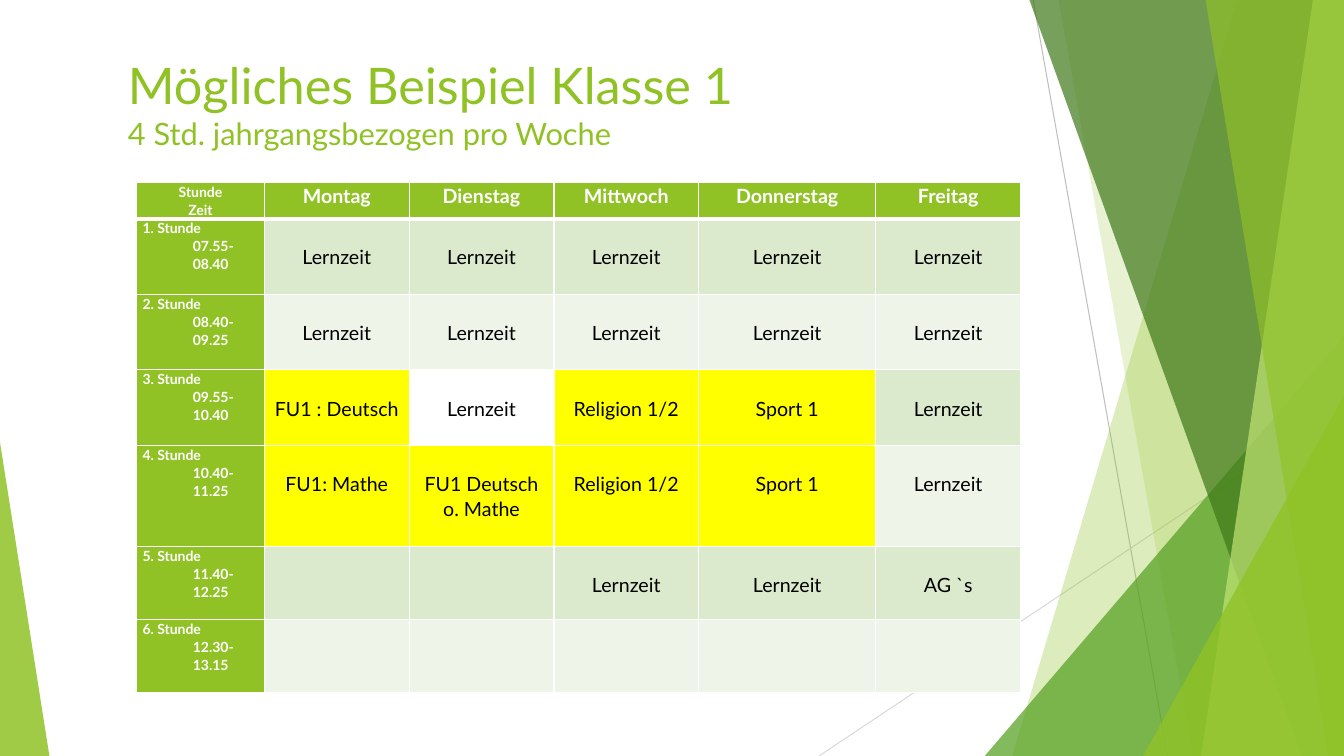
from lxml.etree import SubElement
from pptx import Presentation
from pptx.dml.color import RGBColor
from pptx.enum.shapes import MSO_CONNECTOR, MSO_SHAPE
from pptx.enum.text import MSO_ANCHOR, MSO_AUTO_SIZE, PP_ALIGN
from pptx.oxml.ns import qn
from pptx.util import Pt

# Content
TITLE = "Mögliches Beispiel Klasse 1"
SUBTITLE = "4 Std. jahrgangsbezogen pro Woche"
HEADER = ["Stunde\nZeit", "Montag", "Dienstag", "Mittwoch", "Donnerstag", "Freitag"]
TIMES = ["07.55-08.40", "08.40-09.25", "09.55-10.40",
         "10.40-11.25", "11.40-12.25", "12.30-13.15"]
LESSONS = [
    ["Lernzeit"] * 5,
    ["Lernzeit"] * 5,
    ["FU1 : Deutsch", "Lernzeit", "Religion 1/2", "Sport 1", "Lernzeit"],
    ["FU1: Mathe", "FU1 Deutsch\no. Mathe", "Religion 1/2", "Sport 1", "Lernzeit"],
    ["", "", "Lernzeit", "Lernzeit", "AG `s"],
    [""] * 5,
]
SPECIAL = ("FU1", "Religion", "Sport")  # lessons taught by year group
FREE_CELL = (3, 2)  # row and column of the white cell

# Look
FONT = "Lato"
COLORS = {
    "green": "90C226", "mid": "54A021", "dark": "3F7819", "lime": "C0E474",
    "odd": "DBE9CD", "even": "EEF4E8", "special": "FFFF00",
    "white": "FFFFFF", "text": "000000", "line": "BFBFBF", "pale line": "D9D9D9",
}
WIDTH, HEIGHT = 960, 540
TOP = -0.6
COLUMN_WIDTHS = [91.4, 103.4, 103.4, 103.4, 126.6, 103.4]
ROW_HEIGHTS = [26, 54, 54, 54, 72, 52.2, 52.2]
TABLE_LEFT, TABLE_TOP = 97.5, 130.2
LESSON_OFFSET = 18

# Background: lines (from, to, colour), then facets from back to front.
# A band is (top left, bottom left); a triangle is (left, top, width, height, apex).
LINES = [((738, 0), (834, HEIGHT), "line"), ((WIDTH, 290), (585, HEIGHT), "pale line")]
FACETS = [
    ("band", (884.2, 722.9), "green", 30),
    ("band", (756, 851.8), "green", 20),
    ("triangle", (703.4, 240, 256.6, 300, 1), "mid", 72),
    ("band", (735.1, 929.5), "dark", 70),
    ("band", (938.2, 858.2), "lime", 70),
    ("band", (861.1, 949), "green", 65),
    ("triangle", (816.5, 283, 143.5, 257, 1), "green", 80),
    ("triangle", (0, 316, 35.3, 224, 0), "green", 85),
]


def rgb(name):
    return RGBColor.from_string(COLORS[name])


def add_line(slide, start, end, color):
    points = [Pt(value) for value in start + end]
    connector = slide.shapes.add_connector(MSO_CONNECTOR.STRAIGHT, *points)
    connector.line.color.rgb = rgb(color)
    connector.line.width = Pt(0.75)
    SubElement(connector.element.spPr, qn("a:effectLst"))


def add_facet(slide, kind, geometry, color, opacity):
    if kind == "band":
        top_left, bottom_left = geometry
        builder = slide.shapes.build_freeform(top_left, TOP, scale=float(Pt(1)))
        builder.add_line_segments(
            [(WIDTH, TOP), (WIDTH, HEIGHT), (bottom_left, HEIGHT)], close=True)
        shape = builder.convert_to_shape()
    else:
        *box, apex = geometry
        shape = slide.shapes.add_shape(
            MSO_SHAPE.ISOSCELES_TRIANGLE, *[Pt(value) for value in box])
        shape.adjustments[0] = apex
    shape.shadow.inherit = False
    shape.line.fill.background()
    shape.fill.solid()
    shape.fill.fore_color.rgb = rgb(color)
    fill_color = shape.element.spPr.find(qn("a:solidFill")).find(qn("a:srgbClr"))
    SubElement(fill_color, qn("a:alpha"), val=str(opacity * 1000))


def style_run(run, size, color, bold=False):
    run.font.name = FONT
    run.font.size = Pt(size)
    run.font.bold = bold
    run.font.color.rgb = rgb(color)


def add_borders(cell, top, bottom):
    properties = cell._tc.get_or_add_tcPr()
    for side, width in (("L", 1), ("R", 1), ("T", top), ("B", bottom)):
        line = SubElement(properties, qn("a:ln" + side), w=str(Pt(width)))
        fill = SubElement(line, qn("a:solidFill"))
        SubElement(fill, qn("a:srgbClr"), val=COLORS["white"])


def fill_cell(cell, text, fill, size, color, bold, offset=0):
    cell.fill.solid()
    cell.fill.fore_color.rgb = rgb(fill)
    cell.margin_left = cell.margin_right = Pt(4.3)
    cell.margin_top, cell.margin_bottom = Pt(offset), 0
    cell.vertical_anchor = MSO_ANCHOR.TOP
    cell.text_frame.text = text
    for paragraph in cell.text_frame.paragraphs:
        paragraph.alignment = PP_ALIGN.CENTER
        paragraph.line_spacing = 1.07
        for run in paragraph.runs:
            style_run(run, size, color, bold)


def lesson_fill(row, column, text):
    if (row, column) == FREE_CELL:
        return "white"
    if text.startswith(SPECIAL):
        return "special"
    return "odd" if row % 2 else "even"


def add_timetable(slide):
    frame = slide.shapes.add_table(
        len(ROW_HEIGHTS), len(COLUMN_WIDTHS), Pt(TABLE_LEFT), Pt(TABLE_TOP),
        Pt(sum(COLUMN_WIDTHS)), Pt(sum(ROW_HEIGHTS)))
    table = frame.table
    for column, width in zip(table.columns, COLUMN_WIDTHS):
        column.width = Pt(width)
    for row, height in zip(table.rows, ROW_HEIGHTS):
        row.height = Pt(height)

    hours = [f"{number}. Stunde\n{time}" for number, time in enumerate(TIMES, 1)]
    rows = [HEADER] + [[hour] + lessons for hour, lessons in zip(hours, LESSONS)]
    for row, texts in enumerate(rows):
        for column, text in enumerate(texts):
            cell = table.cell(row, column)
            add_borders(cell, 3 if row == 1 else 1, 3 if row == 0 else 1)
            if row == 0 or column == 0:
                fill_cell(cell, text, "green", 14 if column else 10, "white", True)
            else:
                fill_cell(cell, text, lesson_fill(row, column, text),
                          14, "text", False, LESSON_OFFSET)
        if row > 0:
            label, time = table.cell(row, 0).text_frame.paragraphs
            label.alignment = time.alignment = PP_ALIGN.LEFT
            time._p.get_or_add_pPr().set("marL", str(Pt(36)))


def add_title(slide):
    title = slide.shapes.title
    title.element.getparent().append(title.element)  # in front of the facets
    title.left, title.top, title.width, title.height = Pt(84.2), Pt(35.3), Pt(792), Pt(82)
    text_frame = title.text_frame
    text_frame.text = f"{TITLE}\v{SUBTITLE}"
    text_frame.word_wrap = True
    text_frame.auto_size = MSO_AUTO_SIZE.NONE
    text_frame.vertical_anchor = MSO_ANCHOR.TOP
    paragraph = text_frame.paragraphs[0]
    paragraph.alignment = PP_ALIGN.LEFT
    for run, size in zip(paragraph.runs, (36, 22)):
        style_run(run, size, "green")


def main():
    presentation = Presentation()
    presentation.slide_width, presentation.slide_height = Pt(WIDTH), Pt(HEIGHT)
    slide = presentation.slides.add_slide(presentation.slide_layouts[5])
    for line in LINES:
        add_line(slide, *line)
    for facet in FACETS:
        add_facet(slide, *facet)
    add_title(slide)
    add_timetable(slide)
    presentation.save("out.pptx")


if __name__ == "__main__":
    main()
